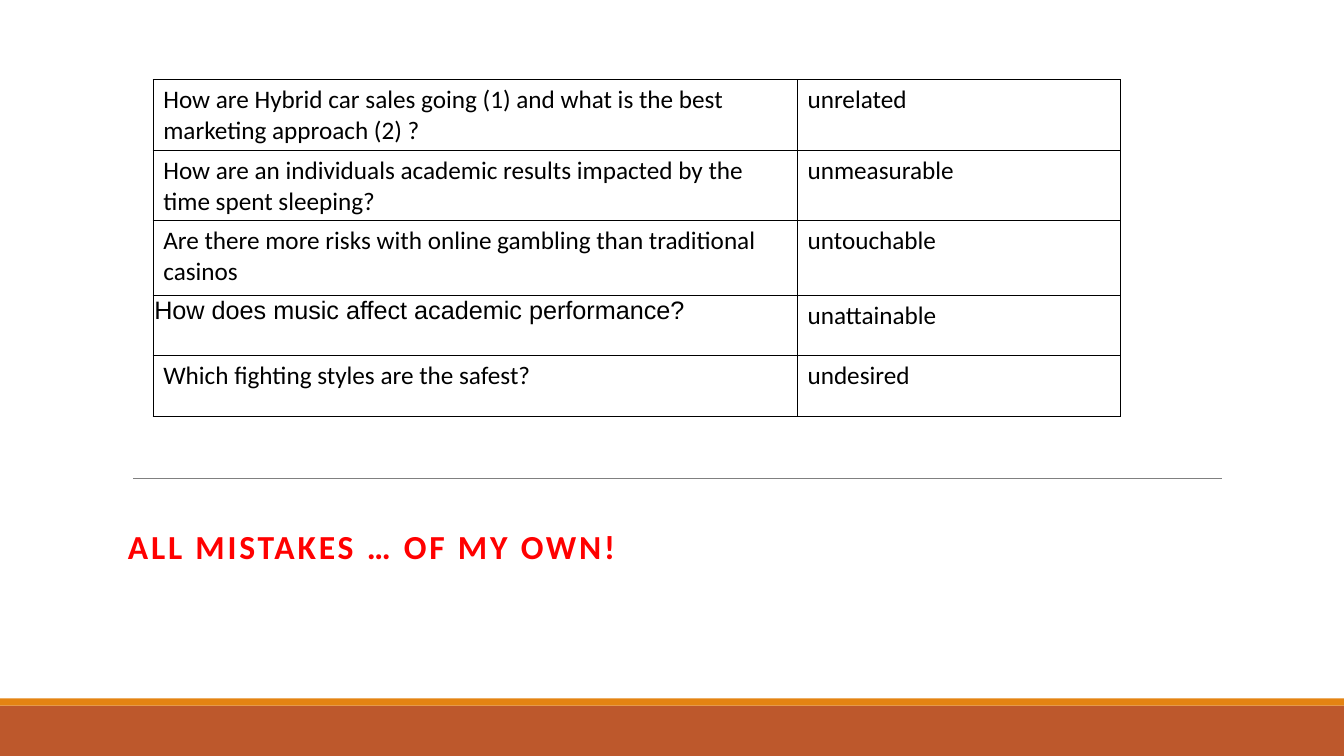
"""Build a slide with a table of research questions and their flaws."""
from lxml import etree
from pptx import Presentation
from pptx.dml.color import RGBColor
from pptx.enum.shapes import MSO_CONNECTOR, MSO_SHAPE
from pptx.oxml.ns import qn
from pptx.util import Inches, Pt

RECT = MSO_SHAPE.RECTANGLE
STRAIGHT = MSO_CONNECTOR.STRAIGHT

ROWS = [
    ("How are Hybrid car sales going (1) and what is the best marketing approach (2) ?", "unrelated"),
    ("How are an individuals academic results impacted by the time spent sleeping?", "unmeasurable"),
    ("Are there more risks with online gambling than traditional casinos", "untouchable"),
    ("How does music affect academic performance?", "unattainable"),
    ("Which fighting styles are the safest?", "undesired"),
]
TIGHT = (3, 0)
WIDTHS = [6.39, 3.2]
HEIGHTS = [0.6, 0.6, 0.74, 0.6, 0.6]
BANDS = [(7, 0.5, "BD582C"), (6.93, 0.07, "E48312")]
TITLE = "ALL MISTAKES … OF MY OWN!"


def color(code):
    return RGBColor.from_string(code)


def write(frame, text, size=18, font="Calibri", ink="000000", bold=False, track=0):
    frame.word_wrap = True
    par = frame.paragraphs[0]
    run = par.add_run()
    run.text = text
    run.font.size = Pt(size)
    run.font.name = font
    run.font.bold = bold
    run.font.color.rgb = color(ink)
    if track:
        run.font._element.set("spc", str(track * 100))
    return par


def border(cell, ink="000000", width=1):
    props = cell._tc.get_or_add_tcPr()
    for side in ("a:lnL", "a:lnR", "a:lnT", "a:lnB"):
        line = etree.SubElement(props, qn(side), w=str(Pt(width)))
        fill = etree.SubElement(line, qn("a:solidFill"))
        etree.SubElement(fill, qn("a:srgbClr"), val=ink)


def add_band(slide, top, height, fill):
    band = slide.shapes.add_shape(RECT, 0, Inches(top), Inches(13.33), Inches(height))
    band.shadow.inherit = False
    band.fill.solid()
    band.fill.fore_color.rgb = color(fill)
    band.line.fill.background()


def add_rule(slide):
    rule = slide.shapes.add_connector(
        STRAIGHT, Inches(1.32), Inches(4.75), Inches(12.12), Inches(4.75))
    rule.line.color.rgb = color("808080")
    rule.line.width = Pt(0.5)
    etree.SubElement(rule._element.spPr, qn("a:effectLst"))


def add_title(slide):
    box = slide.shapes.add_textbox(Inches(1.17), Inches(5.21), Inches(11), Inches(1.25))
    par = write(box.text_frame, TITLE, size=24, ink="FF0000", bold=True, track=2)
    par.line_spacing = 0.9
    par.space_before = Pt(12)
    par.space_after = Pt(2)


def add_grid(slide):
    table = slide.shapes.add_table(
        len(ROWS), len(WIDTHS), Inches(1.52), Inches(0.79),
        Inches(sum(WIDTHS)), Inches(sum(HEIGHTS))).table
    table.first_row = False
    table.horz_banding = False
    for col, width in zip(table.columns, WIDTHS):
        col.width = Inches(width)
    for r, (texts, height) in enumerate(zip(ROWS, HEIGHTS)):
        table.rows[r].height = Inches(height)
        for c, text in enumerate(texts):
            cell = table.cell(r, c)
            tight = (r, c) == TIGHT
            if tight:
                cell.margin_left = cell.margin_right = cell.margin_top = Inches(0.01)
                cell.margin_bottom = 0
            write(cell.text_frame, text, font="Arial" if tight else "Calibri")
            border(cell)
            cell.fill.background()


def main():
    deck = Presentation()
    deck.slide_width = Inches(13.33)
    deck.slide_height = Inches(7.5)
    slide = deck.slides.add_slide(deck.slide_layouts[6])
    for band in BANDS:
        add_band(slide, *band)
    add_rule(slide)
    add_title(slide)
    add_grid(slide)
    deck.save("out.pptx")


if __name__ == "__main__":
    main()
